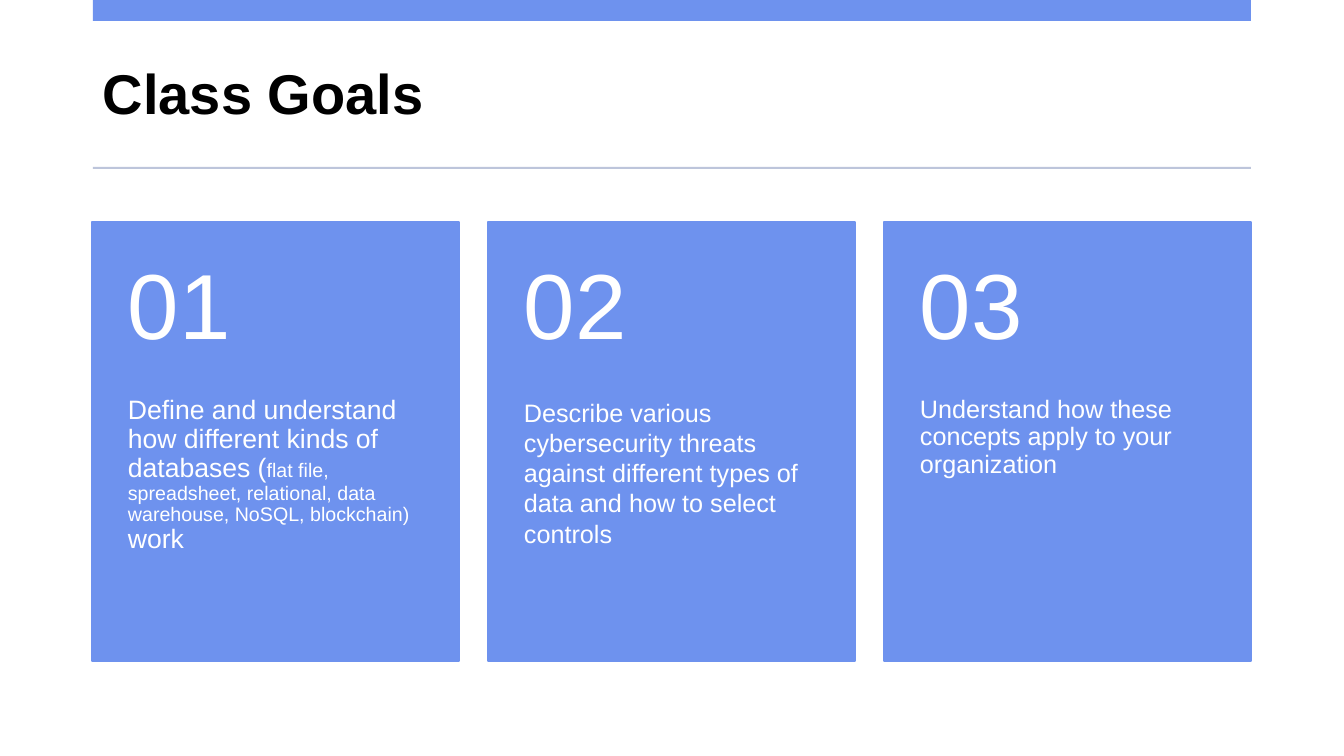
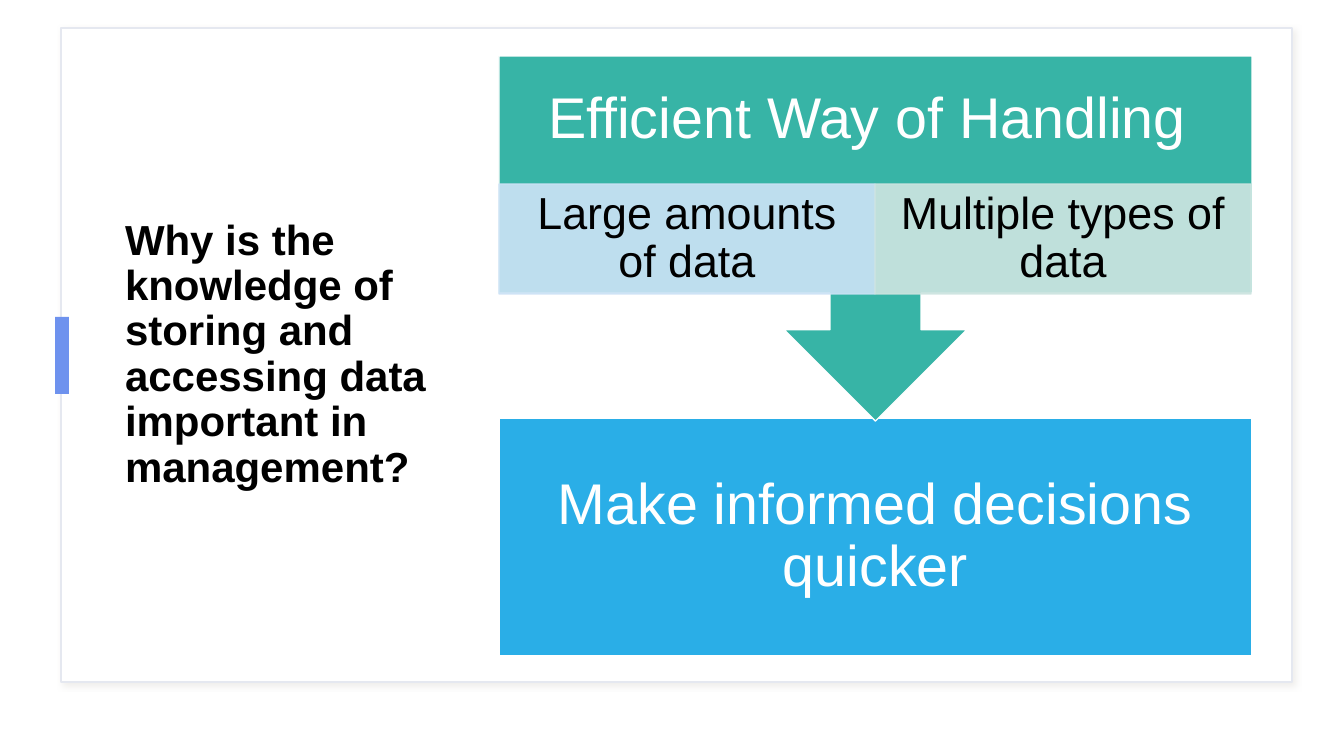
"""Build two slides: the class goals and why data knowledge matters in management."""
from lxml import etree
from pptx import Presentation
from pptx.dml.color import RGBColor
from pptx.enum.shapes import MSO_SHAPE
from pptx.enum.text import MSO_ANCHOR, PP_ALIGN
from pptx.oxml.ns import qn
from pptx.util import Emu, Pt

PX = 914400 / 100.8
FONT = "Arial"

RECTANGLE = MSO_SHAPE.RECTANGLE
CALLOUT = MSO_SHAPE.UP_ARROW_CALLOUT
TOP, MIDDLE = MSO_ANCHOR.TOP, MSO_ANCHOR.MIDDLE
LEFT, CENTER = PP_ALIGN.LEFT, PP_ALIGN.CENTER

BLACK = RGBColor(0x00, 0x00, 0x00)
WHITE = RGBColor(0xFF, 0xFF, 0xFF)
ACCENT = RGBColor(0x6E, 0x92, 0xEE)
RULE = RGBColor(0xBD, 0xC5, 0xDB)
FRAME_LINE = RGBColor(0xE5, 0xE8, 0xF0)
SKY = RGBColor(0x2A, 0xAE, 0xE7)
TEAL = RGBColor(0x37, 0xB4, 0xA6)
PALE_BLUE = RGBColor(0xCD, 0xE3, 0xF6)
PALE_TEAL = RGBColor(0xCE, 0xE5, 0xE1)

TITLE = {"color": BLACK, "bold": True, "insets": (10, 5)}
STEP = {"size": 41, "align": CENTER, "insets": (32, 32)}


def add_box(slide, left, top, width, height, fill=None, line=None, kind=RECTANGLE):
    """Add a filled shape, or a text box when there is no fill; lengths in px."""
    place = [Emu(round(length * PX)) for length in (left, top, width, height)]
    if fill is None:
        return slide.shapes.add_textbox(*place)
    shape = slide.shapes.add_shape(kind, *place)
    shape.shadow.inherit = False
    shape.fill.solid()
    shape.fill.fore_color.rgb = fill
    if line is None:
        shape.line.fill.background()
    else:
        shape.line.color.rgb = line
        shape.line.width = Pt(1)
    return shape


def write_text(shape, *texts, size, small=None, color=WHITE, bold=False, align=LEFT,
               anchor=MIDDLE, insets=(0, 0), spacing=0.9):
    """Write runs into a shape; every second run takes the small size."""
    frame = shape.text_frame
    frame.word_wrap = True
    frame.vertical_anchor = anchor
    frame.margin_left = frame.margin_right = Emu(round(insets[0] * PX))
    frame.margin_top = frame.margin_bottom = Emu(round(insets[1] * PX))
    paragraph = frame.paragraphs[0]
    paragraph.alignment = align
    paragraph.line_spacing = spacing
    for index, text in enumerate(texts):
        run = paragraph.add_run()
        run.text = text
        run.font.name = FONT
        run.font.size = Pt(small if index % 2 else size)
        run.font.bold = bold
        run.font.color.rgb = color


presentation = Presentation()
presentation.slide_width = Emu(round(1344 * PX))
presentation.slide_height = Emu(round(756 * PX))
blank = presentation.slide_layouts[6]

goals = presentation.slides.add_slide(blank)
write_text(add_box(goals, 93, 37, 1158, 119), "Class Goals", size=40, **TITLE)
add_box(goals, 93, 0, 1158, 21, ACCENT)
add_box(goals, 93, 167, 1158, 2, RULE)

GOALS = [
    (("Define and understand how different kinds of databases (",
      "flat file, spreadsheet, relational, data warehouse, NoSQL, blockchain) ",
      "work"), 19, 0.9),
    (("Describe various cybersecurity threats against different types of data "
      "and how to select controls",), 18, 1.0),
    (("Understand how these concepts apply to your organization",), 18, 0.9),
]
for index, (texts, size, spacing) in enumerate(GOALS):
    left = 92 + 396 * index
    add_box(goals, left, 222, 367, 439, ACCENT, ACCENT)
    write_text(add_box(goals, left, 397, 367, 264), *texts, size=size, small=14,
               anchor=TOP, insets=(36, 0), spacing=spacing)
    write_text(add_box(goals, left, 222, 367, 176), f"{index + 1:02}", size=66,
               insets=(36, 18))

reasons = presentation.slides.add_slide(blank)
panel = add_box(reasons, 61, 28, 1231, 654, WHITE, FRAME_LINE)
effects = panel.element.spPr.find(qn("a:effectLst"))
shadow = etree.SubElement(effects, qn("a:outerShdw"), blurRad=str(Pt(4)),
                          dist=str(Pt(3)), dir="2700000", algn="tl", rotWithShape="0")
shadow_color = etree.SubElement(shadow, qn("a:srgbClr"), val="CAC5BC")
etree.SubElement(shadow_color, qn("a:alpha"), val="30000")

write_text(add_box(reasons, 115, 55, 330, 600),
           "Why is the knowledge of storing and accessing data important in management?",
           size=30, **TITLE)
add_box(reasons, 55, 317, 14, 77, ACCENT)

result = add_box(reasons, 499, 418, 753, 238, SKY, WHITE)
write_text(result, "Make informed decisions quicker", **STEP)
callout = add_box(reasons, 499, 56, 753, 365, TEAL, WHITE, CALLOUT)
callout.rotation = 180
write_text(add_box(reasons, 499, 56, 753, 128), "Efficient Way of Handling ", **STEP)

DATA_CELLS = [("Large amounts of data", PALE_BLUE), ("Multiple types of data", PALE_TEAL)]
for index, (text, color) in enumerate(DATA_CELLS):
    cell = add_box(reasons, 499 + 376 * index, 184, 376, 110, color, color)
    for tint in cell.element.spPr.iter(qn("a:srgbClr")):
        etree.SubElement(tint, qn("a:alpha"), val="90000")
    write_text(cell, text, size=32, color=BLACK, align=CENTER, insets=(25, 4))

presentation.save("out.pptx")
